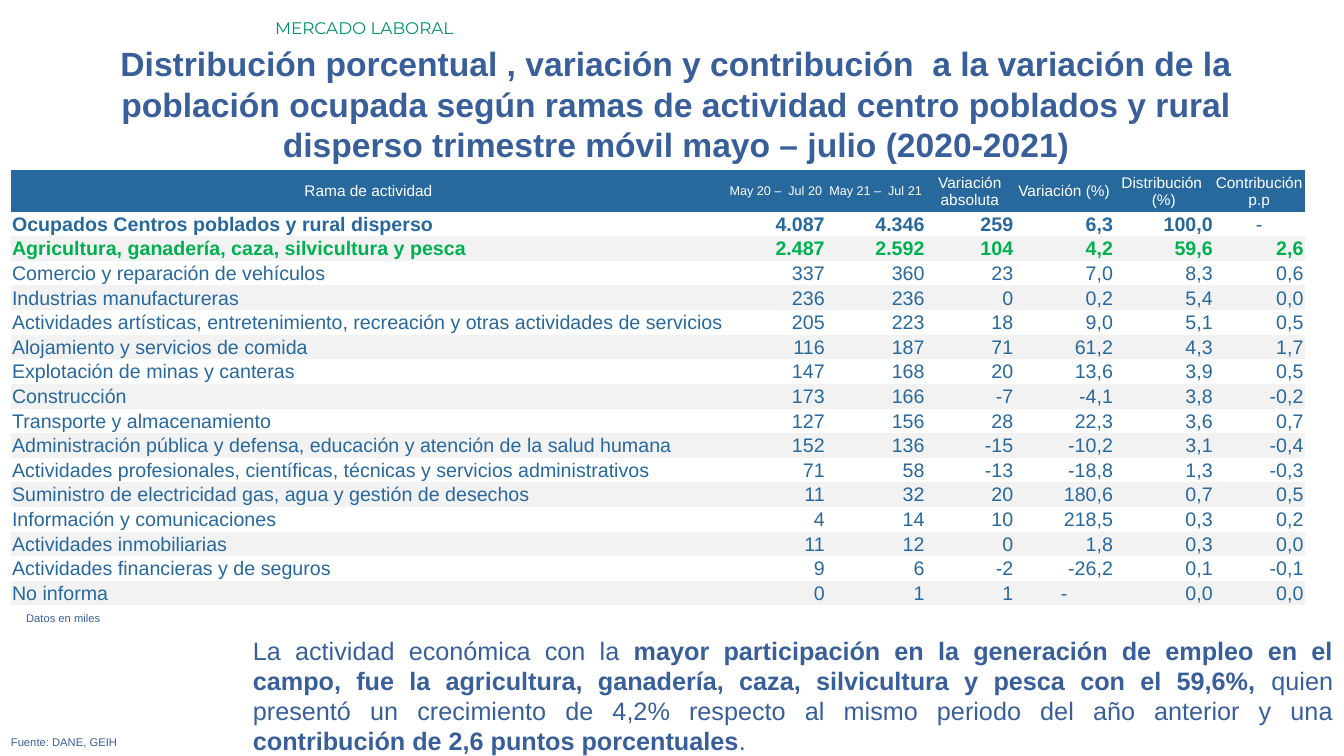
import pptx
import pptx.util
import pptx.dml.color
import pptx.enum.text

Inches = pptx.util.Inches
ALIGN = pptx.enum.text.PP_ALIGN
NAVY = "395F9B"
BLUE = "27689D"
GREEN = "00B050"
STRIPE = "F2F2F2"
NO_STYLE_NO_GRID = "{2D5ABB26-0587-4C30-8999-92F81FD0307C}"

COLUMN_WIDTHS = [7.09, 0.99, 0.99, 0.88, 0.99, 0.99, 0.9]
TABLE_HEIGHT = 4.32
HEADER_HEIGHT = 0.41
HEADINGS = [
    (["Rama de actividad"], 11),
    (["May 20 –  Jul 20"], 9),
    (["May 21 –  Jul 21"], 9),
    (["Variación\nabsoluta"], 11),
    (["Variación (%)"], 11),
    (["Distribución ", "(%)"], 11),
    (["Contribución ", "p.p"], 11),
]
BRANCHES = [
    ("Ocupados Centros poblados y rural disperso", "4.087 4.346 259 6,3 100,0 -"),
    ("Agricultura, ganadería, caza, silvicultura y pesca", "2.487 2.592 104 4,2 59,6 2,6"),
    ("Comercio y reparación de vehículos", "337 360 23 7,0 8,3 0,6"),
    ("Industrias manufactureras", "236 236 0 0,2 5,4 0,0"),
    ("Actividades artísticas, entretenimiento, recreación y otras actividades de servicios",
     "205 223 18 9,0 5,1 0,5"),
    ("Alojamiento y servicios de comida", "116 187 71 61,2 4,3 1,7"),
    ("Explotación de minas y canteras", "147 168 20 13,6 3,9 0,5"),
    ("Construcción", "173 166 -7 -4,1 3,8 -0,2"),
    ("Transporte y almacenamiento", "127 156 28 22,3 3,6 0,7"),
    ("Administración pública y defensa, educación y atención de la salud humana",
     "152 136 -15 -10,2 3,1 -0,4"),
    ("Actividades profesionales, científicas, técnicas y servicios administrativos",
     "71 58 -13 -18,8 1,3 -0,3"),
    ("Suministro de electricidad gas, agua y gestión de desechos", "11 32 20 180,6 0,7 0,5"),
    ("Información y comunicaciones", "4 14 10 218,5 0,3 0,2"),
    ("Actividades inmobiliarias", "11 12 0 1,8 0,3 0,0"),
    ("Actividades financieras y de seguros", "9 6 -2 -26,2 0,1 -0,1"),
    ("No informa", "0 1 1 - 0,0 0,0"),
]


def rgb(value):
    return pptx.dml.color.RGBColor.from_string(value)


def add_text(paragraph, text, size, color, bold=False, font="Arial"):
    for index, line in enumerate(text.split("\n")):
        if index:
            paragraph.add_line_break()
        run = paragraph.add_run()
        run.text = line
        run.font.name = font
        run.font.size = pptx.util.Pt(size)
        run.font.bold = bold
        run.font.color.rgb = rgb(color)


def add_text_box(slide, bounds, runs, size, align, color=NAVY, font="Arial"):
    frame = slide.shapes.add_textbox(*map(Inches, bounds)).text_frame
    frame.word_wrap = True
    frame.auto_size = pptx.enum.text.MSO_AUTO_SIZE.SHAPE_TO_FIT_TEXT
    paragraph = frame.paragraphs[0]
    paragraph.alignment = align
    for text, bold in runs:
        add_text(paragraph, text, size, color, bold, font)


def fill_cell(cell, lines, size, color, align, background=None, bold=False):
    cell.margin_left = cell.margin_right = cell.margin_top = Inches(0.01)
    cell.margin_bottom = 0
    cell.vertical_anchor = pptx.enum.text.MSO_ANCHOR.MIDDLE
    if background:
        cell.fill.solid()
        cell.fill.fore_color.rgb = rgb(background)
    else:
        cell.fill.background()
    for index, line in enumerate(lines):
        frame = cell.text_frame
        paragraph = frame.add_paragraph() if index else frame.paragraphs[0]
        paragraph.alignment = align
        add_text(paragraph, line, size, color, bold)


def add_branch_table(slide):
    table = slide.shapes.add_table(
        len(BRANCHES) + 1, len(COLUMN_WIDTHS), Inches(0.11), Inches(1.69),
        Inches(sum(COLUMN_WIDTHS)), Inches(TABLE_HEIGHT)).table
    table.first_row = table.horz_banding = False
    table._tbl.tblPr[0].text = NO_STYLE_NO_GRID
    for column, width in zip(table.columns, COLUMN_WIDTHS):
        column.width = Inches(width)
    for row in table.rows:
        row.height = Inches((TABLE_HEIGHT - HEADER_HEIGHT) / len(BRANCHES))
    table.rows[0].height = Inches(HEADER_HEIGHT)

    for column, (lines, size) in enumerate(HEADINGS):
        fill_cell(table.cell(0, column), lines, size, "FFFFFF", ALIGN.CENTER, BLUE)
    for row, (branch, figures) in enumerate(BRANCHES, 1):
        color = GREEN if row == 2 else BLUE
        background = None if row % 2 else STRIPE
        for column, text in enumerate([branch] + figures.split()):
            if column == 0:
                align = ALIGN.LEFT
            else:
                align = ALIGN.CENTER if text == "-" else ALIGN.RIGHT
            fill_cell(table.cell(row, column), [text], 14, color, align, background,
                      row <= 2 and text != "-")


def main():
    deck = pptx.Presentation()
    deck.slide_width = Inches(13.33)
    deck.slide_height = Inches(7.5)
    slide = deck.slides.add_slide(deck.slide_layouts[6])

    add_text_box(slide, (0.45, 0.38, 12.51, 1.31), [
        ("Distribución porcentual , variación y contribución  a la variación de la "
         "población ocupada según ramas de actividad centro poblados y rural disperso "
         "trimestre móvil mayo – julio (2020-2021)", True)], 24, ALIGN.CENTER)
    add_text_box(slide, (2.63, 0.13, 10.7, 0.3), [("MERCADO LABORAL", False)],
                 12, ALIGN.LEFT, "009267", "Montserrat")
    add_text_box(slide, (2.41, 6.25, 10.91, 1.31), [
        ("La actividad económica con la ", False),
        ("mayor participación en la generación de empleo en el campo, fue la agricultura, "
         "ganadería, caza, silvicultura y pesca con el 59,6%, ", True),
        ("quien presentó un crecimiento de 4,2% respecto al mismo periodo del año "
         "anterior y una ", False),
        ("contribución de 2,6 puntos porcentuales", True),
        (".", False)], 18, ALIGN.JUSTIFY)
    add_text_box(slide, (0.01, 7.25, 12.91, 0.24), [("Fuente: DANE, GEIH", False)],
                 8, ALIGN.JUSTIFY)
    add_branch_table(slide)
    add_text_box(slide, (0.16, 6.02, 12.91, 0.24), [("Datos en miles", False)],
                 8, ALIGN.JUSTIFY)
    deck.save("out.pptx")


if __name__ == "__main__":
    main()
